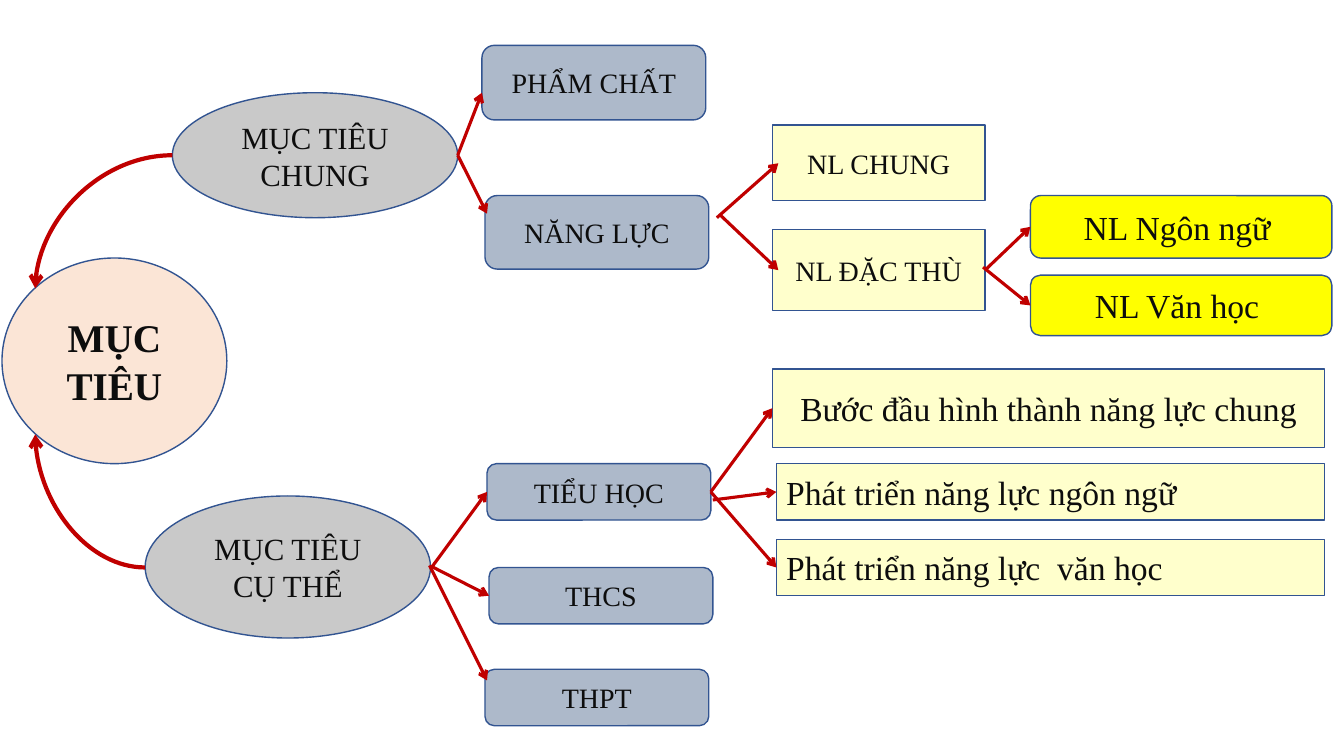
from lxml import etree
from pptx import Presentation
from pptx.dml.color import RGBColor
from pptx.enum.shapes import MSO_CONNECTOR, MSO_SHAPE
from pptx.enum.text import MSO_ANCHOR, PP_ALIGN
from pptx.oxml.ns import qn
from pptx.util import Pt

OVAL, ROUND, RECT = MSO_SHAPE.OVAL, MSO_SHAPE.ROUNDED_RECTANGLE, MSO_SHAPE.RECTANGLE
STRAIGHT, CURVE = MSO_CONNECTOR.STRAIGHT, MSO_CONNECTOR.CURVE
LEFT, CENTER = PP_ALIGN.LEFT, PP_ALIGN.CENTER
MIDDLE = MSO_ANCHOR.MIDDLE
LEFT_SIDE, RIGHT_SIDE = 1, 3
PX = 9144

THEME = {
    "font": "Times New Roman",
    "text": "0D0D0D",
    "outline": "325491",
    "arrow": "C00000",
    "root": ("FBE5D6", 28),
    "branch": ("C9C9C9", 22),
    "topic": ("ADB9CA", 20),
    "detail": ("FFFFCC", 20),
    "outcome": ("FFFFCC", 24),
    "highlight": ("FFFF00", 24),
}

NODES = [
    ("MỤC TIÊU", "root", OVAL, CENTER, 2, 256, 223, 204),
    ("MỤC TIÊU CHUNG", "branch", OVAL, CENTER, 171, 92, 283, 124),
    ("MỤC TIÊU CỤ THỂ", "branch", OVAL, CENTER, 144, 492, 283, 141),
    ("PHẨM CHẤT", "topic", ROUND, CENTER, 478, 45, 222, 74),
    ("NĂNG LỰC", "topic", ROUND, CENTER, 481, 194, 222, 73),
    ("NL CHUNG", "detail", RECT, CENTER, 766, 124, 211, 75),
    ("THPT", "topic", ROUND, CENTER, 481, 664, 222, 56),
    ("THCS", "topic", ROUND, CENTER, 485, 563, 222, 56),
    ("TIỂU HỌC", "topic", ROUND, CENTER, 483, 460, 222, 56),
    ("NL ĐẶC THÙ", "detail", RECT, CENTER, 766, 228, 211, 80),
    ("Bước đầu hình thành năng lực chung", "outcome", RECT, CENTER, 766, 366, 548, 78),
    ("Phát triển năng lực ngôn ngữ", "outcome", RECT, LEFT, 770, 460, 544, 56),
    ("Phát triển năng lực  văn học", "outcome", RECT, LEFT, 770, 535, 544, 56),
    ("NL Ngôn ngữ ", "highlight", ROUND, CENTER, 1022, 194, 299, 62),
    ("NL Văn học ", "highlight", ROUND, CENTER, 1022, 273, 299, 60),
]

ARROWS = [
    (CURVE, 3, (171, 154, 35, 286), None, None),
    (CURVE, 3, (144, 563, 35, 431), None, None),
    (STRAIGHT, 2.25, (454, 154, 478, 92), None, None),
    (STRAIGHT, 2.25, (454, 154, 483, 212), None, None),
    (STRAIGHT, 2.25, (428, 563, 483, 488), None, "TIỂU HỌC"),
    (STRAIGHT, 2.25, (428, 562, 485, 592), None, "THCS"),
    (STRAIGHT, 2.25, (426, 561, 483, 675), None, None),
    (STRAIGHT, 2.25, (705, 488, 766, 405), "TIỂU HỌC", "Bước đầu hình thành năng lực chung"),
    (STRAIGHT, 2.25, (707, 496, 770, 488), None, "Phát triển năng lực ngôn ngữ"),
    (STRAIGHT, 2.25, (705, 488, 770, 563), "TIỂU HỌC", "Phát triển năng lực  văn học"),
    (STRAIGHT, 2.25, (711, 216, 772, 162), None, None),
    (STRAIGHT, 2.25, (714, 213, 772, 268), None, None),
    (STRAIGHT, 2.25, (977, 268, 1022, 225), "NL ĐẶC THÙ", "NL Ngôn ngữ "),
    (STRAIGHT, 2.25, (975, 265, 1022, 303), None, "NL Văn học "),
]

prs = Presentation()
prs.slide_width, prs.slide_height = 1333 * PX, 750 * PX
slide = prs.slides.add_slide(prs.slide_layouts[6])

nodes = {}
for label, level, outline, align, *box in NODES:
    fill, size = THEME[level]
    node = slide.shapes.add_shape(outline, *[length * PX for length in box])
    node.shadow.inherit = False
    node.fill.solid()
    node.fill.fore_color.rgb = RGBColor.from_string(fill)
    node.line.color.rgb = RGBColor.from_string(THEME["outline"])
    node.line.width = Pt(1)
    node.text_frame.word_wrap = True
    node.text_frame.vertical_anchor = MIDDLE
    node.text_frame.text = label
    paragraph = node.text_frame.paragraphs[0]
    paragraph.alignment = align
    font = paragraph.runs[0].font
    font.name = THEME["font"]
    font.size = Pt(size)
    font.bold = level == "root"
    font.color.rgb = RGBColor.from_string(THEME["text"])
    nodes[label] = node

for kind, weight, ends, source, target in ARROWS:
    arrow = slide.shapes.add_connector(kind, *[length * PX for length in ends])
    if source:
        arrow.begin_connect(nodes[source], RIGHT_SIDE)
    if target:
        arrow.end_connect(nodes[target], LEFT_SIDE)
    arrow.line.color.rgb = RGBColor.from_string(THEME["arrow"])
    arrow.line.width = Pt(weight)
    properties = arrow._element.spPr
    if kind == CURVE:
        properties.find(qn("a:prstGeom")).set("prst", "curvedConnector2")
    etree.SubElement(properties.find(qn("a:ln")), qn("a:tailEnd"), type="arrow")
    etree.SubElement(properties, qn("a:effectLst"))

prs.save("out.pptx")
